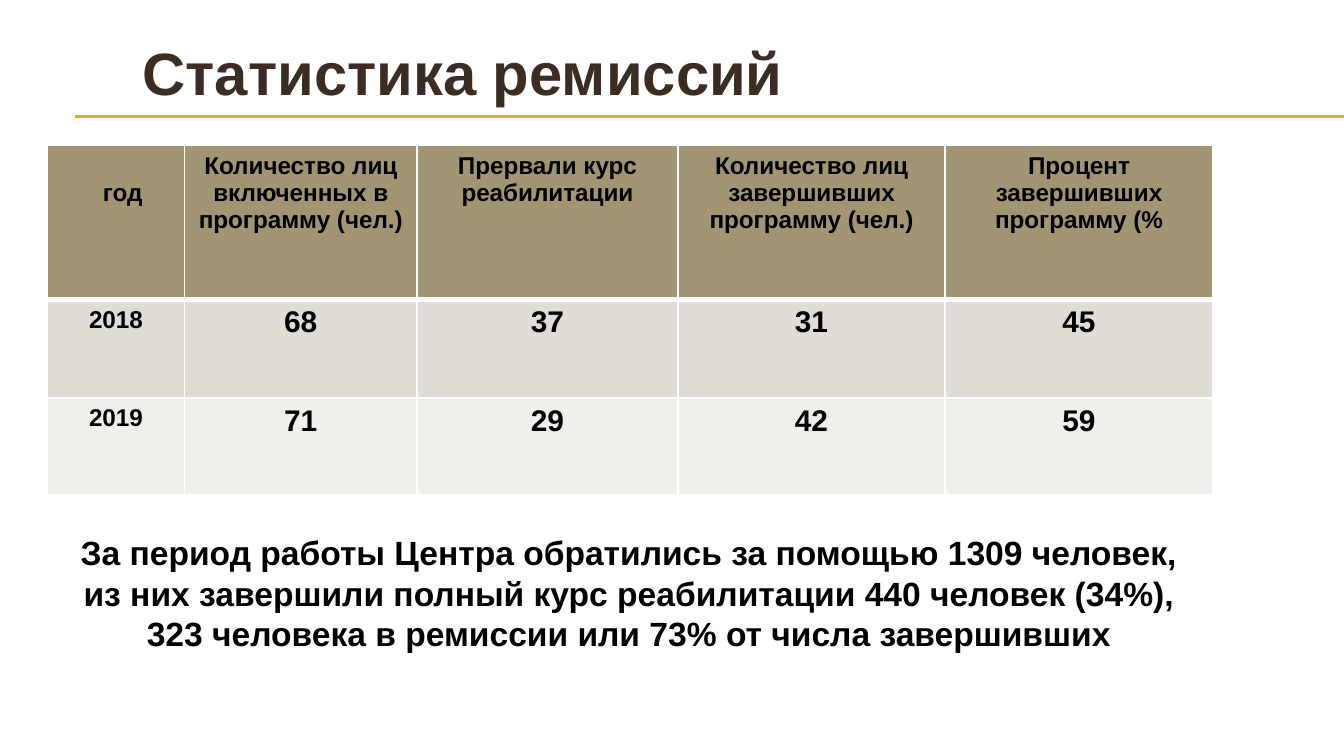
"""Build the remission statistics slide."""
from dataclasses import dataclass

from lxml.etree import SubElement
from pptx import Presentation
from pptx.dml.color import RGBColor
from pptx.enum.shapes import MSO_CONNECTOR
from pptx.enum.text import MSO_ANCHOR, MSO_AUTO_SIZE, PP_ALIGN
from pptx.oxml.ns import qn
from pptx.util import Pt

COLORS = {
    "title": "3B2C24",
    "text": "000000",
    "rule": "F0A22E",
    "border": "FFFFFF",
    "header": "A19574",
    "odd": "E0DDD6",
    "even": "F0EFEB",
}
FONT = "Arial"
SLIDE_WIDTH, SLIDE_HEIGHT = 720, 405
RULE_LEFT = 40.3
RULE_TOPS = (61.9, 62.6)
COLUMN_WIDTHS = (73.4, 124.6, 139.7, 143.3, 143.3)
YEAR_MARGIN_LEFT, YEAR_MARGIN_TOP = 14.4, 18.2


@dataclass(frozen=True)
class Box:
    left: float
    top: float
    width: float
    height: float


@dataclass(frozen=True)
class TableRow:
    height: float
    fill: str
    first_size: float
    value_size: float
    bottom_border: float
    texts: tuple[str, ...]


TITLE_BOX = Box(69.2, 15.1, 600, 46.1)
TABLE_BOX = Box(25.4, 78, sum(COLUMN_WIDTHS), 187.2)
SUMMARY_BOX = Box(25.2, 281.5, 623.5, 72.7)
TITLE = "Статистика ремиссий"
SUMMARY = (
    "За период работы Центра обратились за помощью 1309 человек, "
    "из них завершили полный курс реабилитации 440 человек (34%), "
    "323 человека в ремиссии или 73% от числа завершивших"
)
ROWS = (
    TableRow(82.4, "header", 13, 13, 3, (
        "год",
        "Количество лиц включенных в программу (чел.)",
        "Прервали курс реабилитации",
        "Количество лиц завершивших программу (чел.)",
        "Процент завершивших программу (%",
    )),
    TableRow(52.8, "odd", 13, 16, 1, ("2018", "68", "37", "31", "45")),
    TableRow(52, "even", 13, 16, 1, ("2019", "71", "29", "42", "59")),
)


def color(name: str) -> RGBColor:
    return RGBColor.from_string(COLORS[name])


def write(paragraph, text: str, size: float, color_name: str, alignment) -> None:
    paragraph.alignment = alignment
    run = paragraph.add_run()
    run.text = text
    run.font.name = FONT
    run.font.size = Pt(size)
    run.font.bold = True
    run.font.color.rgb = color(color_name)


def prepare_placeholder(shape, box: Box, anchor) -> None:
    shape.left, shape.top = Pt(box.left), Pt(box.top)
    shape.width, shape.height = Pt(box.width), Pt(box.height)
    frame = shape.text_frame
    frame.word_wrap = True
    frame.auto_size = MSO_AUTO_SIZE.NONE
    frame.vertical_anchor = anchor


def add_rule(slide, top: float) -> None:
    connector = slide.shapes.add_connector(
        MSO_CONNECTOR.STRAIGHT, Pt(RULE_LEFT), Pt(top), Pt(SLIDE_WIDTH), Pt(top)
    )
    connector.line.color.rgb = color("rule")
    connector.line.width = Pt(0.75)
    SubElement(connector._element.spPr, qn("a:effectLst"))


def set_borders(cell, top: float, bottom: float) -> None:
    properties = cell._tc.get_or_add_tcPr()
    for side, width in (("L", 1), ("R", 1), ("T", top), ("B", bottom)):
        line = SubElement(properties, qn(f"a:ln{side}"), w=str(Pt(width)))
        fill = SubElement(line, qn("a:solidFill"))
        SubElement(fill, qn("a:srgbClr"), val=COLORS["border"])


def add_statistics_table(slide) -> None:
    table = slide.shapes.add_table(
        len(ROWS), len(COLUMN_WIDTHS), Pt(TABLE_BOX.left), Pt(TABLE_BOX.top),
        Pt(TABLE_BOX.width), Pt(TABLE_BOX.height),
    ).table
    table.horz_banding = False
    for column, width in zip(table.columns, COLUMN_WIDTHS):
        column.width = Pt(width)
    top_border = 1
    for row_index, row in enumerate(ROWS):
        table.rows[row_index].height = Pt(row.height)
        for column_index, text in enumerate(row.texts):
            cell = table.cell(row_index, column_index)
            set_borders(cell, top_border, row.bottom_border)
            cell.fill.solid()
            cell.fill.fore_color.rgb = color(row.fill)
            cell.margin_left = cell.margin_right = Pt(7.2)
            cell.margin_top = cell.margin_bottom = Pt(3.6)
            size = row.value_size if column_index else row.first_size
            write(cell.text_frame.paragraphs[0], text, size, "text", PP_ALIGN.CENTER)
        top_border = row.bottom_border
    year_cell = table.cell(0, 0)
    year_cell.margin_left = Pt(YEAR_MARGIN_LEFT)
    year_cell.margin_top = Pt(YEAR_MARGIN_TOP)


def add_summary(shape) -> None:
    prepare_placeholder(shape, SUMMARY_BOX, MSO_ANCHOR.TOP)
    paragraph = shape.text_frame.paragraphs[0]
    properties = paragraph._p.get_or_add_pPr()
    properties.set("marL", "0")
    properties.set("indent", "0")
    SubElement(properties, qn("a:buNone"))
    paragraph.space_before = Pt(0)
    write(paragraph, SUMMARY, 18, "text", PP_ALIGN.CENTER)


def main() -> None:
    presentation = Presentation()
    presentation.slide_width = Pt(SLIDE_WIDTH)
    presentation.slide_height = Pt(SLIDE_HEIGHT)
    slide = presentation.slides.add_slide(presentation.slide_layouts[1])
    for top in RULE_TOPS:
        add_rule(slide, top)
    title = slide.shapes.title
    prepare_placeholder(title, TITLE_BOX, MSO_ANCHOR.MIDDLE)
    write(title.text_frame.paragraphs[0], TITLE, 32, "title", PP_ALIGN.LEFT)
    add_statistics_table(slide)
    add_summary(slide.placeholders[1])
    presentation.save("out.pptx")


if __name__ == "__main__":
    main()
